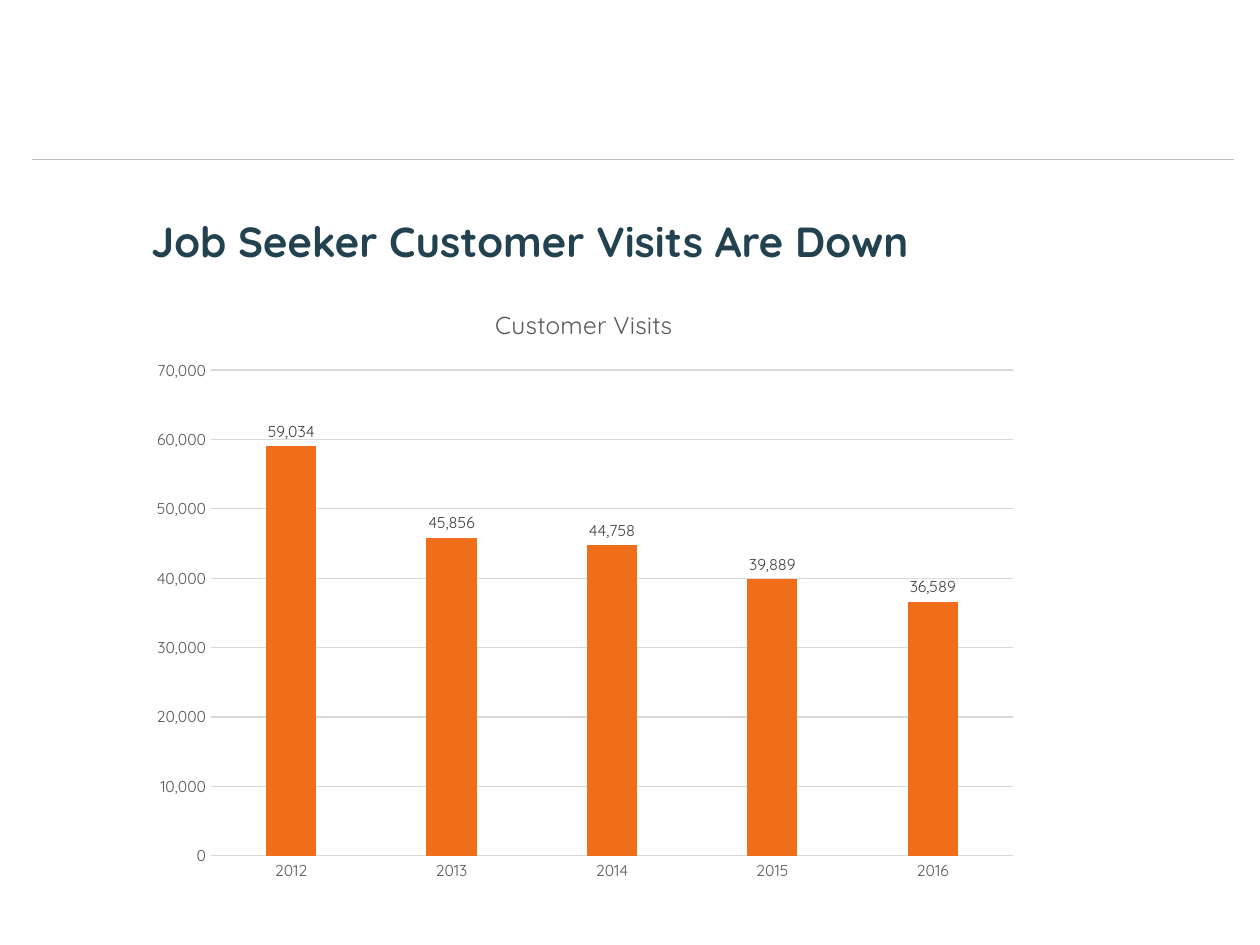
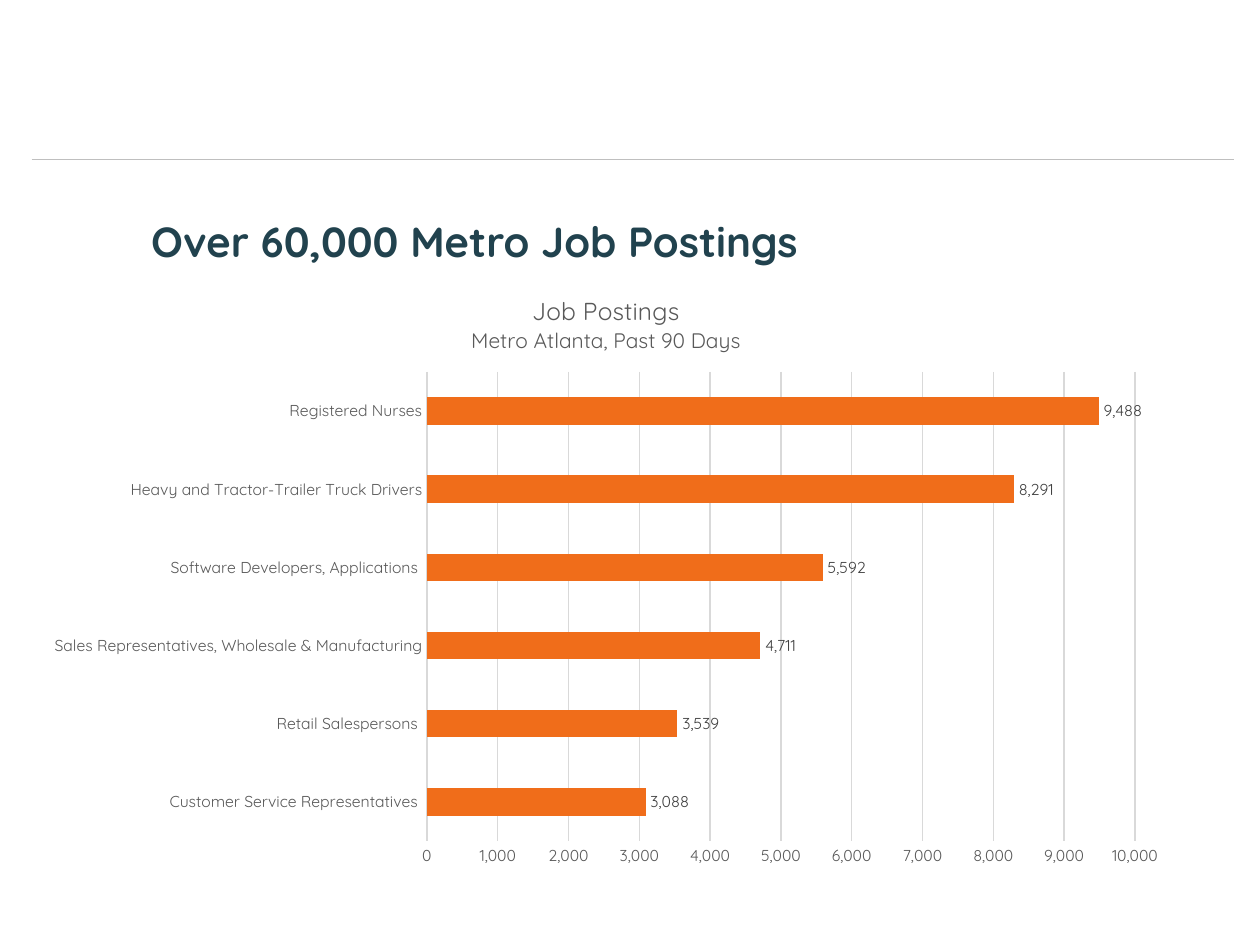
from dataclasses import dataclass
from typing import NamedTuple

from lxml.etree import SubElement
from pptx import Presentation
from pptx.chart.data import CategoryChartData
from pptx.dml.color import RGBColor
from pptx.enum.chart import XL_CHART_TYPE as ChartType
from pptx.enum.chart import XL_LABEL_POSITION as LabelPosition
from pptx.enum.chart import XL_TICK_MARK as TickMark
from pptx.enum.shapes import MSO_CONNECTOR as Connector
from pptx.enum.text import MSO_ANCHOR as Anchor
from pptx.enum.text import MSO_AUTO_SIZE as AutoSize
from pptx.enum.text import PP_ALIGN as Align
from pptx.oxml.ns import qn
from pptx.util import Pt


@dataclass(frozen=True)
class Theme:
    font: str = "Quicksand"
    heading: RGBColor = RGBColor(0x21, 0x42, 0x4E)
    bar: RGBColor = RGBColor(0xF0, 0x6D, 0x1A)
    rule: RGBColor = RGBColor(0xBF, 0xBF, 0xBF)
    grid: RGBColor = RGBColor(0xD9, 0xD9, 0xD9)
    axis_text: RGBColor = RGBColor(0x59, 0x59, 0x59)
    value_text: RGBColor = RGBColor(0x40, 0x40, 0x40)
    heading_size: int = 24
    chart_title_size: int = 14
    chart_subtitle_size: int = 12
    label_size: int = 9


class Box(NamedTuple):
    """A rectangle on the slide, in points."""
    left: float
    top: float
    width: float
    height: float

    def emu(self):
        return [Pt(length) for length in self]

    def shares_of(self, outer):
        """Place and size as fractions of an outer box."""
        return {
            "x": (self.left - outer.left) / outer.width,
            "y": (self.top - outer.top) / outer.height,
            "w": self.width / outer.width,
            "h": self.height / outer.height,
        }


THEME = Theme()
NUMBER_FORMAT = "#,##0"
HEADING_BOX = Box(79.2, 119.5, 487.4, 28.1)


def style_font(font, size, color, bold=False):
    font.name = THEME.font
    font.size = Pt(size)
    font.bold = bold
    font.color.rgb = color


def add_header_rule(slide):
    rule = slide.shapes.add_connector(
        Connector.STRAIGHT, Pt(18), Pt(91.4), Pt(704.9), Pt(91.4))
    rule.line.color.rgb = THEME.rule
    rule.line.width = Pt(0.5)
    SubElement(rule._element.spPr, qn("a:effectLst"))


def add_heading(slide, text):
    heading = slide.shapes.title
    heading.left, heading.top, heading.width, heading.height = HEADING_BOX.emu()
    frame = heading.text_frame
    frame.text = text
    frame.word_wrap = True
    frame.auto_size = AutoSize.NONE
    frame.vertical_anchor = Anchor.TOP
    paragraph = frame.paragraphs[0]
    paragraph.alignment = Align.LEFT
    style_font(paragraph.font, THEME.heading_size, THEME.heading, bold=True)


def add_heading_slide(deck, heading):
    slide = deck.slides.add_slide(deck.slide_layouts[5])
    add_header_rule(slide)
    add_heading(slide, heading)
    return slide


def set_chart_title(chart, title, subtitle):
    frame = chart.chart_title.text_frame
    frame.text = title
    style_font(frame.paragraphs[0].font, THEME.chart_title_size, THEME.axis_text)
    if subtitle:
        second_line = frame.add_paragraph()
        second_line.text = subtitle
        style_font(second_line.font, THEME.chart_subtitle_size, THEME.axis_text)


def style_axes(chart, maximum, step):
    categories, values = chart.category_axis, chart.value_axis
    for axis in (categories, values):
        axis.major_tick_mark = axis.minor_tick_mark = TickMark.NONE
        style_font(axis.tick_labels.font, THEME.label_size, THEME.axis_text)
    categories.format.line.color.rgb = THEME.grid
    categories.format.line.width = Pt(0.75)
    values.format.line.fill.background()
    values.minimum_scale, values.maximum_scale = 0, maximum
    values.major_unit = step
    values.tick_labels.number_format = NUMBER_FORMAT
    values.tick_labels.number_format_is_linked = False
    values.has_major_gridlines = True
    values.major_gridlines.format.line.color.rgb = THEME.grid
    values.major_gridlines.format.line.width = Pt(0.75)


def style_bars(plot, gap, overlap):
    plot.gap_width, plot.overlap = gap, overlap
    plot.vary_by_categories = False
    bars = plot.series[0]
    bars.invert_if_negative = False
    bars.format.fill.solid()
    bars.format.fill.fore_color.rgb = THEME.bar
    labels = bars.data_labels
    labels.show_value = True
    labels.position = LabelPosition.OUTSIDE_END
    labels.number_format = NUMBER_FORMAT
    labels.number_format_is_linked = False
    style_font(labels.font, THEME.label_size, THEME.value_text)


def place_plot(chart, chart_box, plot_box):
    """Fix the inner plot area, without its axis labels, to a box on the slide."""
    plot_area = chart._chartSpace.chart.plotArea
    for old_layout in plot_area.findall(qn("c:layout")):
        plot_area.remove(old_layout)
    layout = plot_area.makeelement(qn("c:layout"))
    plot_area.insert(0, layout)
    manual = SubElement(layout, qn("c:manualLayout"))
    settings = {"layoutTarget": "inner", "xMode": "edge", "yMode": "edge",
                **plot_box.shares_of(chart_box)}
    for name, value in settings.items():
        SubElement(manual, qn(f"c:{name}"), val=str(value))


def add_bar_chart(slide, kind, chart_box, plot_box, counts, title, maximum, step,
                  gap, overlap=0, subtitle=None):
    data = CategoryChartData(number_format=NUMBER_FORMAT)
    data.categories = list(counts)
    data.add_series(title, counts.values())
    chart = slide.shapes.add_chart(kind, *chart_box.emu(), data).chart
    chart.has_legend = False
    chart.font.name = THEME.font
    set_chart_title(chart, title, subtitle)
    style_axes(chart, maximum, step)
    style_bars(chart.plots[0], gap, overlap)
    place_plot(chart, chart_box, plot_box)


def main():
    deck = Presentation()
    deck.slide_width, deck.slide_height = Pt(720), Pt(540)

    visits = {"2012": 59034, "2013": 45856, "2014": 44758,
              "2015": 39889, "2016": 36589}
    add_bar_chart(
        add_heading_slide(deck, "Job Seeker Customer Visits Are Down"),
        ChartType.COLUMN_CLUSTERED,
        Box(79.2, 162, 509, 348.5), Box(120.6, 211.5, 458.3, 277.5),
        visits, "Customer Visits", maximum=70000, step=10000, gap=219, overlap=-27)

    postings = {
        "Customer Service Representatives ": 3088,
        "Retail Salespersons ": 3539,
        "Sales Representatives, Wholesale & Manufacturing": 4711,
        "Software Developers, Applications ": 5592,
        "Heavy and Tractor-Trailer Truck Drivers": 8291,
        "Registered Nurses": 9488,
    }
    add_bar_chart(
        add_heading_slide(deck, "Over 60,000 Metro Job Postings"),
        ChartType.BAR_CLUSTERED,
        Box(18, 154.8, 656.6, 347), Box(244, 212.6, 404.6, 268),
        postings, "Job Postings", maximum=10000, step=1000, gap=182,
        subtitle="Metro Atlanta, Past 90 Days")

    deck.save("out.pptx")


if __name__ == "__main__":
    main()
